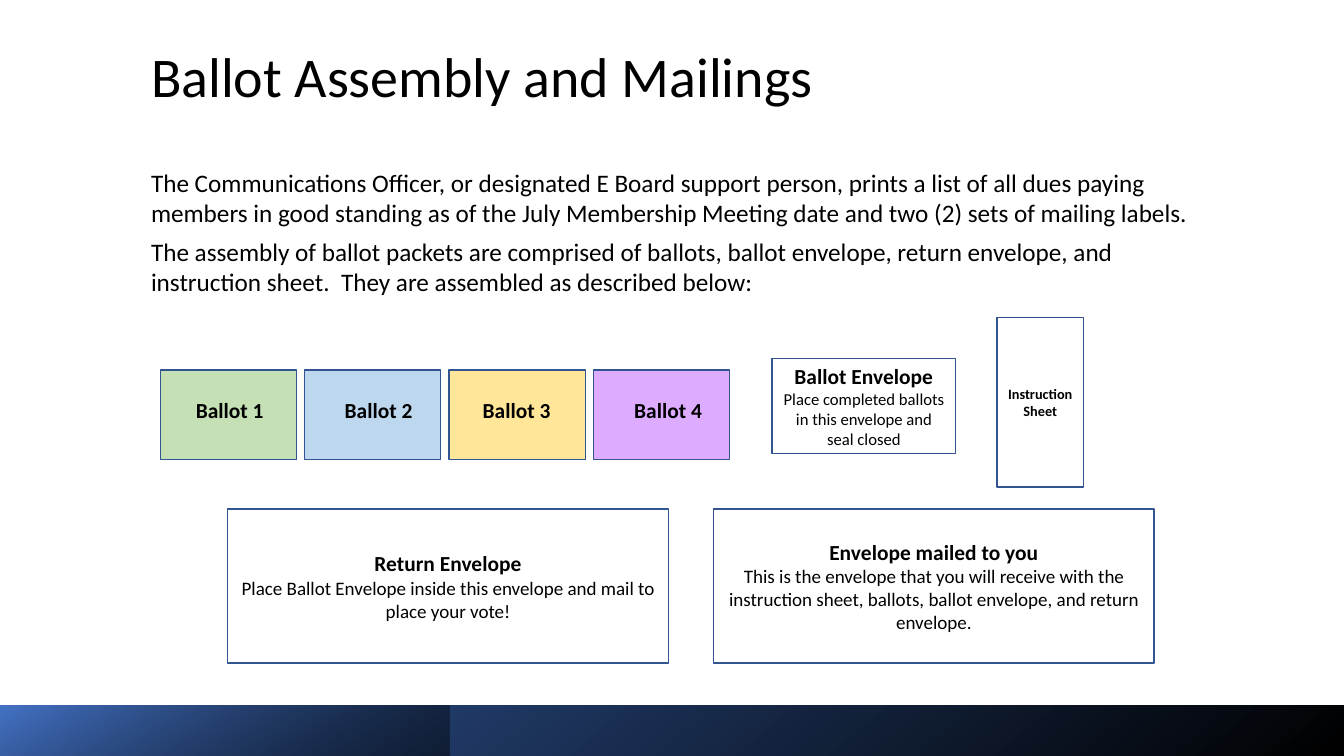
from lxml.etree import SubElement
from pptx import Presentation
from pptx.dml.color import RGBColor
from pptx.enum.shapes import MSO_SHAPE as SHAPE
from pptx.enum.text import MSO_ANCHOR as ANCHOR, PP_ALIGN as ALIGN
from pptx.oxml.ns import qn
from pptx.util import Inches, Pt

# Grid: square cells, 133.33 columns by 75 rows
CELL = Inches(0.1)
COLS, ROWS = 133.33, 75

BLACK = RGBColor(0x00, 0x00, 0x00)
WHITE = RGBColor(0xFF, 0xFF, 0xFF)
EDGE = RGBColor(0x32, 0x54, 0x91)
NAVY = RGBColor(0x2F, 0x55, 0x97)
BLUE = RGBColor(0x44, 0x72, 0xC4)
GREEN = RGBColor(0xC5, 0xE0, 0xB4)
SKY = RGBColor(0xBD, 0xD7, 0xEE)
GOLD = RGBColor(0xFF, 0xE6, 0x99)
LILAC = RGBColor(0xDD, 0xAB, 0xFF)

FONT = "Calibri"
HEAD = 15.3


def grid(*cells):
    return [round(cell * CELL) for cell in cells]


def add_run(para, text, size, bold=False):
    run = para.add_run()
    run.text = text
    run.font.name = FONT
    run.font.size = Pt(size)
    run.font.bold = bold
    run.font.color.rgb = BLACK


def add_break(para, size):
    para.add_line_break()
    mark = para._p.findall(qn("a:br"))[-1]
    SubElement(mark, qn("a:rPr"), sz=str(round(size * 100)))


def add_text(slide, place, paras, size, bold=False, align=ALIGN.LEFT):
    frame = slide.shapes.add_textbox(*grid(*place)).text_frame
    frame.word_wrap = True
    for i, text in enumerate(paras):
        para = frame.add_paragraph() if i else frame.paragraphs[0]
        para.alignment = align
        para.space_after = Pt(6)
        add_run(para, text, size, bold)
    return frame


def add_rect(slide, place):
    rect = slide.shapes.add_shape(SHAPE.RECTANGLE, *grid(*place))
    rect.shadow.inherit = False
    return rect


def add_card(slide, place, color=WHITE):
    card = add_rect(slide, place)
    card.fill.solid()
    card.fill.fore_color.rgb = color
    card.line.color.rgb = EDGE
    card.line.width = Pt(1)
    return card


def add_sheet(slide, place, head, size=HEAD, note="", small=0):
    frame = add_card(slide, place).text_frame
    frame.word_wrap = True
    frame.vertical_anchor = ANCHOR.MIDDLE
    para = frame.paragraphs[0]
    para.alignment = ALIGN.CENTER
    para.space_after = Pt(6)
    add_run(para, head, size, True)
    if note:
        add_break(para, size)
        add_run(para, note, small)


def add_band(slide, width, color, end, angle, alpha=100):
    band = add_rect(slide, (0, 70, width, 5.1))
    band.line.fill.background()
    band.fill.gradient()
    band.fill.gradient_angle = angle
    stops = band.fill.gradient_stops
    for stop, tint, spot in zip(stops, (BLACK, color), (0, end)):
        stop.color.rgb = tint
        stop.position = spot
    if alpha < 100:
        tint = band._element.spPr.find(".//" + qn("a:srgbClr"))
        SubElement(tint, qn("a:alpha"), val=str(alpha * 1000))


def main():
    prs = Presentation()
    prs.slide_width, prs.slide_height = grid(COLS, ROWS)
    slide = prs.slides.add_slide(prs.slide_layouts[6])

    # Title
    title = add_text(slide, (14, 1.9, 111.3, 12),
                     ["Ballot Assembly and Mailings"], 40)
    title.vertical_anchor = ANCHOR.MIDDLE
    title.paragraphs[0].line_spacing = 0.9
    title.paragraphs[0].space_after = Pt(0)

    # Footer bands
    add_band(slide, COLS, NAVY, 1, 130)
    add_band(slide, 44.6, BLUE, 0.99, 120, 46)

    # Introduction
    add_text(slide, (14, 16.1, 107.7, 14), [
        "The Communications Officer, or designated E Board support person, "
        "prints a list of all dues paying members in good standing as of the "
        "July Membership Meeting date and two (2) sets of mailing labels.",
        "The assembly of ballot packets are comprised of ballots, ballot "
        "envelope, return envelope, and instruction sheet.  They are "
        "assembled as described below:"], 18)

    # Ballots: even steps, each label with its own inset
    ballots = [(GREEN, 2.1, ALIGN.CENTER), (SKY, 2.1, ALIGN.RIGHT),
               (GOLD, 1.9, ALIGN.CENTER), (LILAC, 2.6, ALIGN.CENTER)]
    for i, (color, inset, align) in enumerate(ballots):
        left = 15.9 + 14.33 * i
        add_card(slide, (left, 36.7, 13.5, 8.9), color)
        add_text(slide, (left + inset, 38.9, 9.6, 3.6),
                 [f"Ballot {i + 1}"], HEAD, True, align)

    # Ballot envelope and instructions
    add_sheet(slide, (76.6, 35.6, 18.2, 9.4), "Ballot Envelope", HEAD,
              "Place completed ballots in this envelope and seal closed", 11.9)
    add_sheet(slide, (98.9, 31.5, 8.6, 16.8), "Instruction Sheet", 10.2)

    # Mailing envelopes
    mail = [("Return Envelope",
             "Place Ballot Envelope inside this envelope and mail to place "
             "your vote!"),
            ("Envelope mailed to you",
             "This is the envelope that you will receive with the instruction "
             "sheet, ballots, ballot envelope, and return envelope.")]
    for i, (head, note) in enumerate(mail):
        add_sheet(slide, (22.6 + 48.2 * i, 50.5, 43.7, 15.3),
                  head, HEAD, note, 13.6)

    prs.save("out.pptx")


if __name__ == "__main__":
    main()
